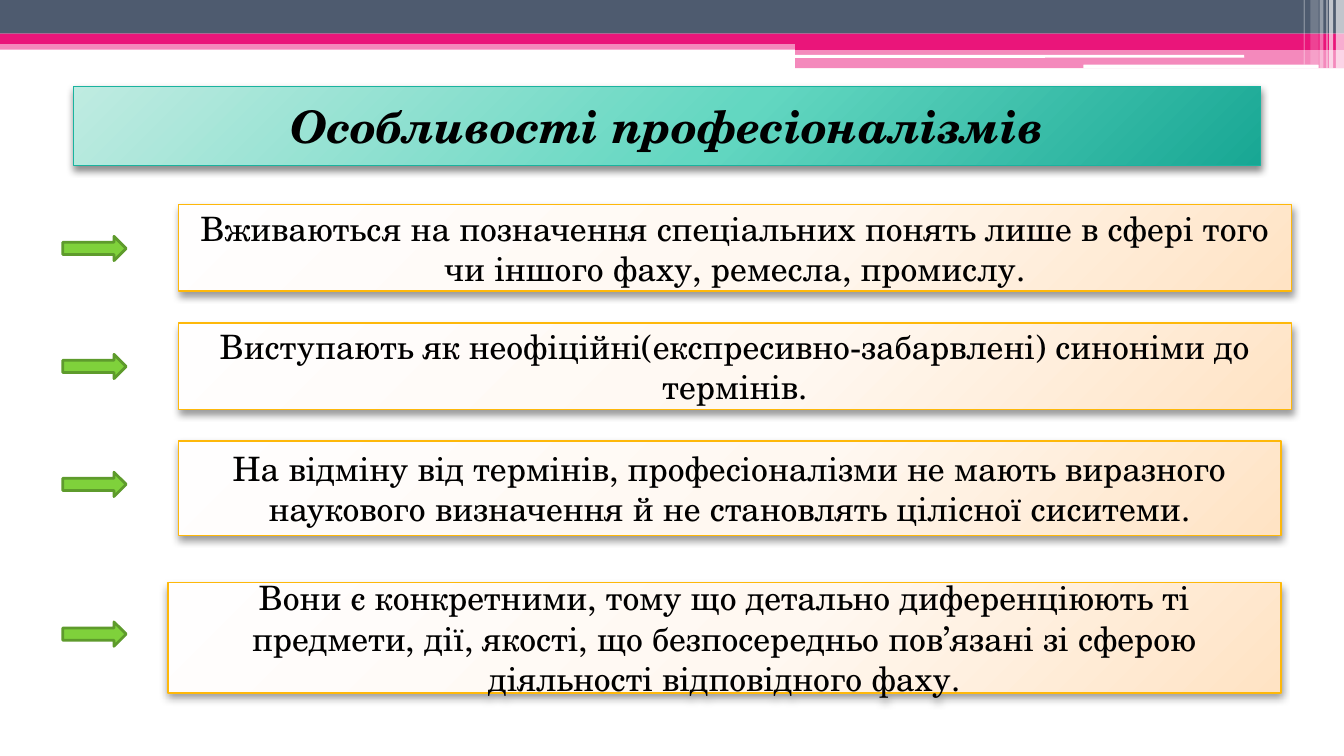
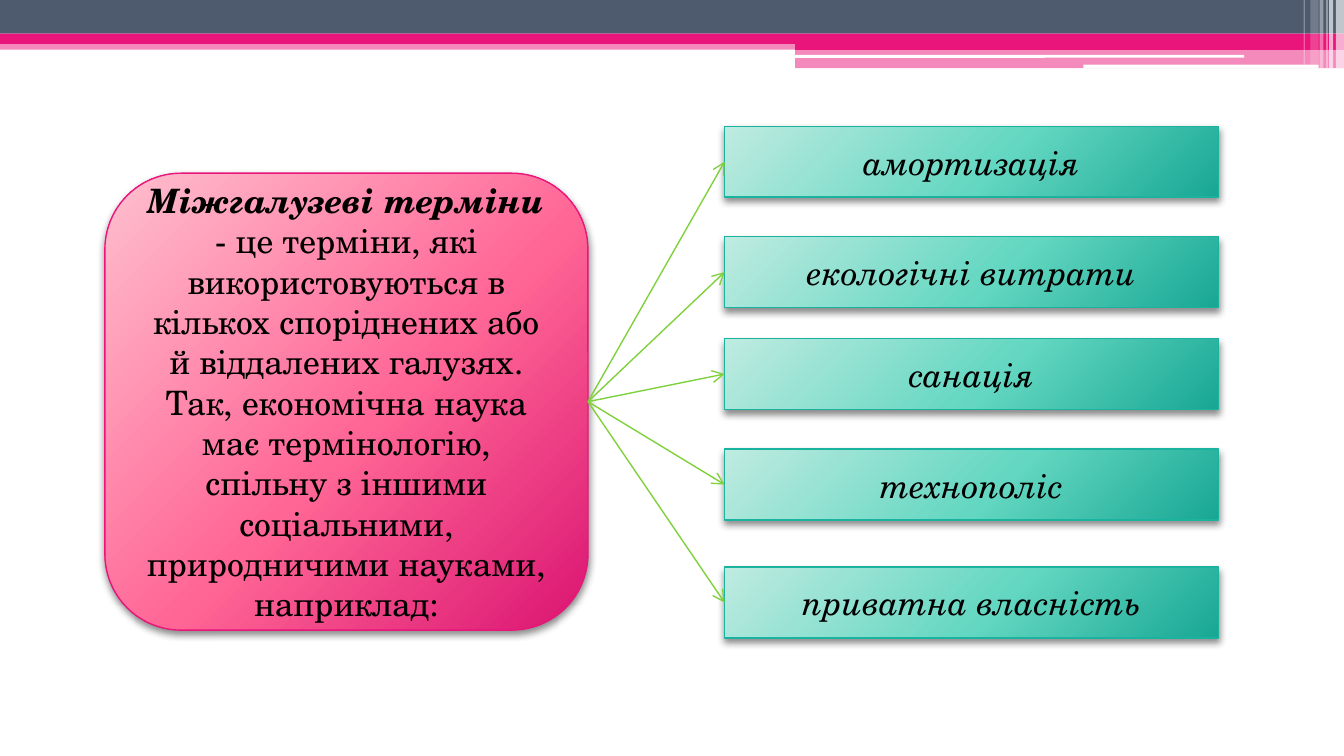
import pptx
import pptx.dml.color
import pptx.enum.shapes
import pptx.enum.text
import pptx.oxml
import pptx.oxml.ns
import pptx.util

Pt = pptx.util.Pt
qn = pptx.oxml.ns.qn
KIND = pptx.enum.shapes.MSO_SHAPE

FONT = "TeX Gyre Schola"
BLACK, WHITE = "000000", "FFFFFF"
SLATE, PINK, GREEN, DARK_GREEN = "4E5B6F", "EA157A", "7FD13B", "5E9B2C"

# Gradient colours, line colour, shadow opacity and shadow blur
TEAL_LOOK = (("BFEBE1", "63D7C1", "18A794"), "1AB39F", 45, 4)
CREAM_LOOK = (("FFFEFE", "FFF8F1", "FFE3C4"), "FEB80A", 40, 4.1)
PINK_LOOK = (("FFBFCF", "FF6695", "DA1472"), PINK, 45, 4)

# Left, top, width, height, colour, opacity
BANDS = [
    (0, 22, 720, 4.6, PINK, 50),
    (0, 0, 720, 18, SLATE, 100),
    (0, 18, 720, 5.6, PINK, 100),
    (426, 22, 294, 4.8, PINK, 100),
    (426, 26, 294, 10.6, PINK, 50),
]
WHITE_BARS = [(425.6, 29.4, 241, 1.6), (580.4, 34.6, 126, 2)]
# Left, width, height, opacity
STRIPES = [
    (715.6, 4.4, 36.6, 65), (712, 2.2, 36.6, 65), (710.6, 0.7, 36.6, 60),
    (707, 2, 36.6, 40), (702, 4.4, 34.6, 20), (698.4, 0.7, 34.6, 30),
]


def color(value):
    return pptx.dml.color.RGBColor.from_string(value)


def drawing_xml(tag, attributes="", content=""):
    """Make one element of the drawing namespace."""
    return pptx.oxml.parse_xml(
        f'<a:{tag} {pptx.oxml.ns.nsdecls("a")} {attributes}>{content}</a:{tag}>')


class SlideBuilder:
    def __init__(self, deck):
        self.deck = deck
        self.page = None

    def new_page(self, layout_name):
        layout = self.deck.slide_layouts.get_by_name(layout_name)
        self.page = self.deck.slides.add_slide(layout)

    def shape(self, kind, left, top, width, height):
        box = self.page.shapes.add_shape(kind, Pt(left), Pt(top), Pt(width), Pt(height))
        box.shadow.inherit = False
        return box

    def plain(self, kind, left, top, width, height, fill, opacity=100):
        """Draw a flat shape without a line."""
        box = self.shape(kind, left, top, width, height)
        box.fill.solid()
        box.fill.fore_color.rgb = color(fill)
        box.line.fill.background()
        if opacity < 100:
            tint = box.element.spPr.find(qn("a:solidFill")).find(qn("a:srgbClr"))
            tint.append(drawing_xml("alpha", f'val="{opacity * 1000}"'))
        return box

    def master_bands(self):
        """Draw the top decoration and move it to the slide master."""
        bands = [self.plain(KIND.RECTANGLE, *band) for band in BANDS]
        bands += [self.plain(KIND.ROUNDED_RECTANGLE, *bar, WHITE) for bar in WHITE_BARS]
        bands += [self.plain(KIND.RECTANGLE, left, 0, width, height, WHITE, opacity)
                  for left, width, height, opacity in STRIPES]
        tree = self.deck.slide_master.shapes.element
        for index, band in enumerate(bands):
            band.element.nvSpPr.cNvPr.set("id", str(100 + index))
            tree.insert(2 + index, band.element)

    def apply_look(self, box, look):
        """Give a shape its gradient, thin line and soft shadow."""
        shades, line, opacity, blur = look
        stops = "".join(
            f'<a:gs pos="{place * 1000}"><a:srgbClr val="{shade}"/></a:gs>'
            for place, shade in zip((0, 55, 100), shades))
        focus = '<a:fillToRect l="-40000" t="-90000" r="140000" b="190000"/>'
        gradient = drawing_xml(
            "gradFill", 'rotWithShape="1"',
            f'<a:gsLst>{stops}</a:gsLst><a:path path="circle">{focus}</a:path>')
        properties = box.element.spPr
        box.fill.background()
        properties.replace(properties.find(qn("a:noFill")), gradient)
        box.line.color.rgb = color(line)
        box.line.width = Pt(0.75)
        box.shadow.inherit = False
        properties.find(qn("a:effectLst")).append(drawing_xml(
            "outerShdw",
            f'blurRad="{Pt(blur)}" dist="{Pt(2)}" dir="5400000" rotWithShape="0"',
            f'<a:srgbClr val="{BLACK}"><a:alpha val="{opacity * 1000}"/></a:srgbClr>'))

    def put_text(self, box, spans, size=18):
        """Fill a shape with (text, bold, italic) spans."""
        frame = box.text_frame
        frame.word_wrap = True
        frame.auto_size = pptx.enum.text.MSO_AUTO_SIZE.NONE
        frame.vertical_anchor = pptx.enum.text.MSO_ANCHOR.MIDDLE
        para = frame.paragraphs[0]
        para.alignment = pptx.enum.text.PP_ALIGN.CENTER
        for text, bold, italic in spans:
            span = para.add_run()
            span.text = text
            span.font.name = FONT
            span.font.size = Pt(size)
            span.font.bold = bold
            span.font.italic = italic
            span.font.color.rgb = color(BLACK)

    def title(self, text, left, top, width, height):
        box = self.page.shapes.title
        box.left, box.top, box.width, box.height = map(Pt, (left, top, width, height))
        box.element.spPr.append(
            drawing_xml("prstGeom", 'prst="roundRect"', "<a:avLst/>"))
        self.apply_look(box, TEAL_LOOK)
        self.put_text(box, [(text, True, True)], 24)

    def card(self, kind, left, top, width, height, look, spans):
        box = self.shape(kind, left, top, width, height)
        self.apply_look(box, look)
        self.put_text(box, spans)
        return box

    def block_arrow(self, left, top):
        arrow = self.plain(KIND.RIGHT_ARROW, left, top, 34, 13, GREEN)
        arrow.line.color.rgb = color(DARK_GREEN)
        arrow.line.width = Pt(1.5)

    def link(self, source, target):
        """Join the right side of one shape to the left side of another."""
        line = self.page.shapes.add_connector(
            pptx.enum.shapes.MSO_CONNECTOR.STRAIGHT, 0, 0, 0, 0)
        line.begin_connect(source, 3)
        line.end_connect(target, 1)
        line.line.color.rgb = color(GREEN)
        line.line.width = Pt(0.75)
        properties = line.element.spPr
        properties.find(qn("a:ln")).append(drawing_xml("tailEnd", 'type="arrow"'))
        properties.append(drawing_xml("effectLst"))


def features_slide(builder):
    builder.title("Особливості професіоналізмів", 39.4, 46.2, 635.8, 42.4)
    # Arrow top, then the box: left, top, width, height, text
    features = [
        (126.6, 95.6, 109.6, 596.4, 46.4,
         "Вживаються на позначення спеціальних понять лише в сфері того "
         "чи іншого фаху, ремесла, промислу."),
        (189.8, 95.6, 173, 596.4, 46.4,
         "Виступають як неофіційні(експресивно-забарвлені) синоніми до термінів."),
        (253, 95.6, 236.2, 590.6, 50.6,
         "На відміну від термінів, професіоналізми не мають виразного "
         "наукового визначення й не становлять цілісної сиситеми."),
        (333.2, 90, 312.2, 596.2, 59,
         "Вони є конкретними, тому що детально диференціюють ті предмети, дії, "
         "якості, що безпосередньо пов’язані зі сферою діяльності відповідного фаху."),
    ]
    for arrow_top, *place, text in features:
        builder.block_arrow(33.6, arrow_top)
        builder.card(KIND.RECTANGLE, *place, CREAM_LOOK, [(text, False, False)])


def shared_terms_slide(builder):
    definition = builder.card(
        KIND.ROUNDED_RECTANGLE, 56.2, 92.8, 258.8, 244.8, PINK_LOOK,
        [("Міжгалузеві терміни", True, True),
         (" - це терміни, які використовуються в кількох споріднених або "
          "й віддалених галузях. Так, економічна наука має термінологію, "
          "спільну з іншими соціальними, природничими науками, наприклад:",
          False, False)])
    terms = [(67.6, "амортизація"), (126.8, "екологічні витрати"), (181.4, "санація"),
             (240.6, "технополіс"), (303.8, "приватна власність")]
    for top, term in terms:
        box = builder.card(KIND.RECTANGLE, 388.2, top, 264.6, 38, TEAL_LOOK,
                           [(term, False, True)])
        builder.link(definition, box)


def main():
    deck = pptx.Presentation()
    deck.slide_width, deck.slide_height = Pt(720), Pt(405)
    builder = SlideBuilder(deck)
    builder.new_page("Title Only")
    builder.master_bands()
    features_slide(builder)
    builder.new_page("Blank")
    shared_terms_slide(builder)
    deck.save("out.pptx")


if __name__ == "__main__":
    main()
